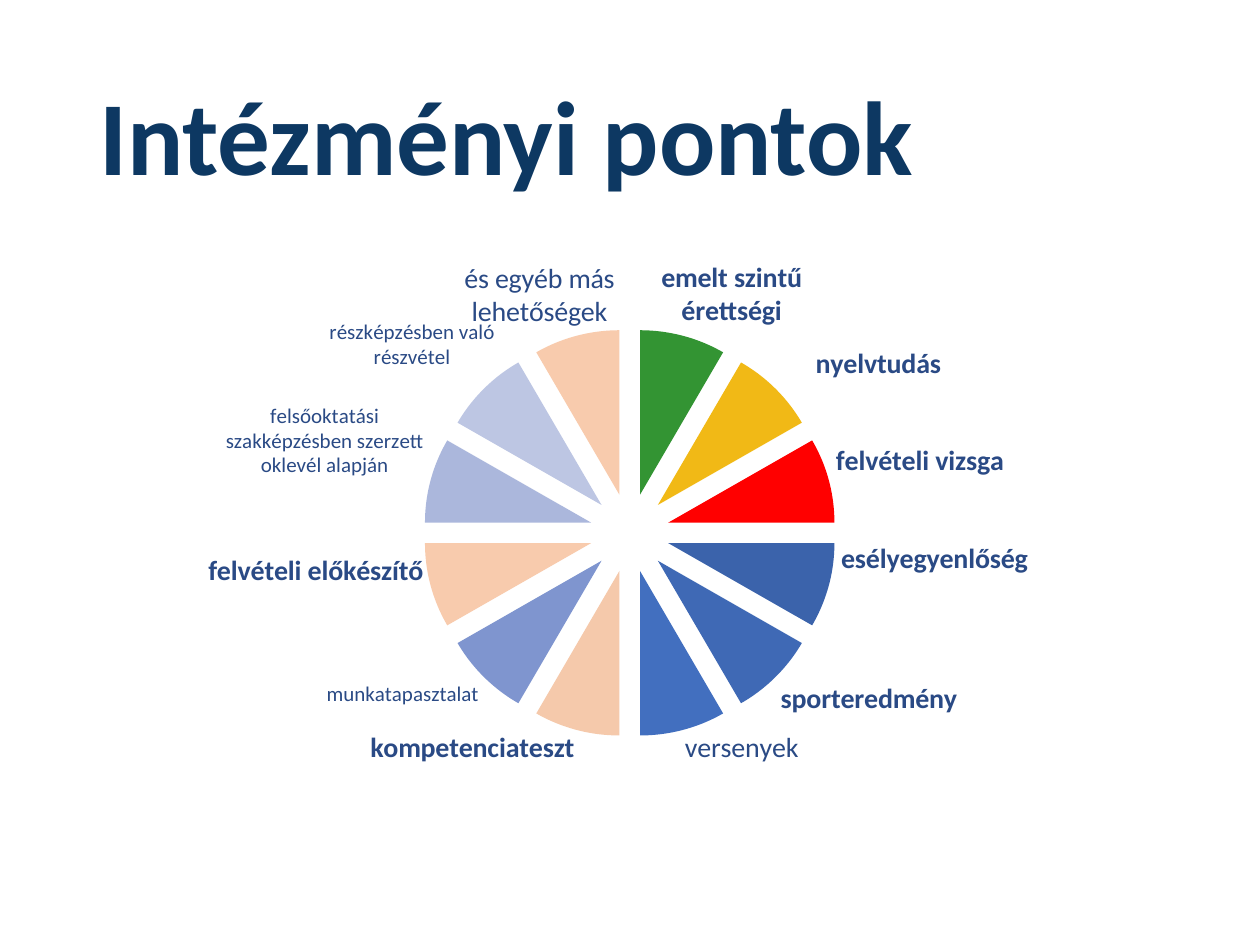
from lxml import etree
from pptx import Presentation
from pptx import util as u
from pptx.chart import data
from pptx.dml import color
from pptx.enum import chart as c
from pptx.enum import text
from pptx.oxml import ns

FONT = "Calibri"
LABEL_COLOR = "2A4A85"
SLICES = [
    ("emelt szintű érettségi", "339433", 16, True, (-13.5, 0)),
    ("nyelvtudás", "F1B916", 16, True, (20, -1)),
    ("felvételi vizsga", "FF0000", 16, True, None),
    ("esélyegyenlőség", "3B63AB", 16, True, (3, -26)),
    ("sporteredmény", "3F69B5", 16, True, None),
    ("versenyek", "426FBF", 16, False, None),
    ("kompetenciateszt", "F5C9AB", 16, True, None),
    ("munkatapasztalat", "7F95CF", 12, False, None),
    ("felvételi előkészítő", "F8CBAD", 16, True, (0, -19)),
    ("felsőoktatási szakképzésben szerzett oklevél alapján", "ABB7DC", 12, False, None),
    ("részképzésben való részvétel", "BDC6E3", 12, False, (9, -8)),
    ("és egyéb más lehetőségek", "F8CBAD", 16, False, (23, 0.5)),
]


def rgb(value):
    """Turn a hex string into a colour."""
    return color.RGBColor.from_string(value)


def style_font(font, size, bold, value):
    """Set the face, size, weight and colour of a font."""
    font.name = FONT
    font.size = u.Pt(size)
    font.bold = bold
    font.color.rgb = rgb(value)


def chart_element(name, **values):
    """Make a chart element holding one value element per keyword."""
    element = etree.Element(ns.qn(f"c:{name}"))
    for key, value in values.items():
        etree.SubElement(element, ns.qn(f"c:{key}")).set("val", str(value))
    return element


def manual_layout(box, modes=None, **lengths):
    """Make a layout from lengths in points, as shares of the chart box."""
    sides = {"x": box[2], "w": box[2], "y": box[3], "h": box[3]}
    shares = {key: u.Pt(length) / sides[key] for key, length in lengths.items()}
    layout = chart_element("layout")
    layout.append(chart_element("manualLayout", **(modes or {}), **shares))
    return layout


def add_title(slide, box):
    """Place and format the slide title in the box."""
    title = slide.shapes.title
    title.left, title.top, title.width, title.height = box
    frame = title.text_frame
    frame.word_wrap = True
    frame.vertical_anchor = text.MSO_ANCHOR.MIDDLE
    paragraph = frame.paragraphs[0]
    paragraph.alignment = text.PP_ALIGN.LEFT
    paragraph.line_spacing = 0.9
    run = paragraph.add_run()
    run.text = "Intézményi pontok"
    style_font(run.font, 60, True, "0D3862")


def hide_leader_lines(chart):
    """Turn off the lines between slices and moved labels."""
    labels = chart.element.xpath(".//c:ser/c:dLbls")[0]
    for line in labels.findall(ns.qn("c:showLeaderLines")):
        labels.remove(line)
    line = chart_element("showLeaderLines")
    line.set("val", "0")
    labels.append(line)


def add_pie(slide, box):
    """Add the exploded pie of point sources in the box."""
    chart_data = data.CategoryChartData()
    chart_data.categories = [entry[0] for entry in SLICES]
    chart_data.add_series("Series 1", [8] * len(SLICES))
    chart = slide.shapes.add_chart(c.XL_CHART_TYPE.PIE, *box, chart_data).chart
    chart.has_title = chart.has_legend = False
    chart.font.name, chart.font.size = FONT, u.Pt(10)

    plot = chart.plots[0]
    plot.vary_by_categories = True
    series = plot.series[0]
    labels = series.data_labels
    labels.show_value, labels.show_category_name = False, True
    labels.position = c.XL_LABEL_POSITION.OUTSIDE_END
    style_font(labels.font, 16, True, LABEL_COLOR)

    for index, (_, fill, size, bold, offset) in enumerate(SLICES):
        point = series.points[index]
        point.format.fill.solid()
        point.format.fill.fore_color.rgb = rgb(fill)
        point.format.line.fill.background()
        style_font(point.data_label.font, size, bold, LABEL_COLOR)
        point.data_label.position = c.XL_LABEL_POSITION.OUTSIDE_END
        label = chart.element.xpath(f".//c:dLbl[c:idx/@val='{index}']")[0]
        label.find(ns.qn("c:showVal")).set("val", "0")
        label.find(ns.qn("c:showCatName")).set("val", "1")
        if offset:
            label.insert(1, manual_layout(box, x=offset[0], y=offset[1]))
    hide_leader_lines(chart)

    explosion = chart_element("explosion")
    explosion.set("val", "24")
    chart.element.xpath(".//c:ser/c:tx")[0].addnext(explosion)
    area = chart.element.xpath(".//c:plotArea")[0]
    for layout in area.findall(ns.qn("c:layout")):
        area.remove(layout)
    modes = {"layoutTarget": "inner", "xMode": "edge", "yMode": "edge"}
    area.insert(0, manual_layout(box, modes, x=51.2, y=42.4, w=545.4, h=235.6))


def main():
    """Build and save the presentation."""
    presentation = Presentation()
    presentation.slide_width, presentation.slide_height = u.Pt(720), u.Pt(540)
    slide = presentation.slides.add_slide(presentation.slide_layouts[5])
    add_title(slide, [u.Pt(length) for length in (49.5, 28.75, 621, 104.4)])
    add_pie(slide, [u.Pt(length) for length in (36, 146, 648.5, 294.5)])
    presentation.save("out.pptx")


if __name__ == "__main__":
    main()
